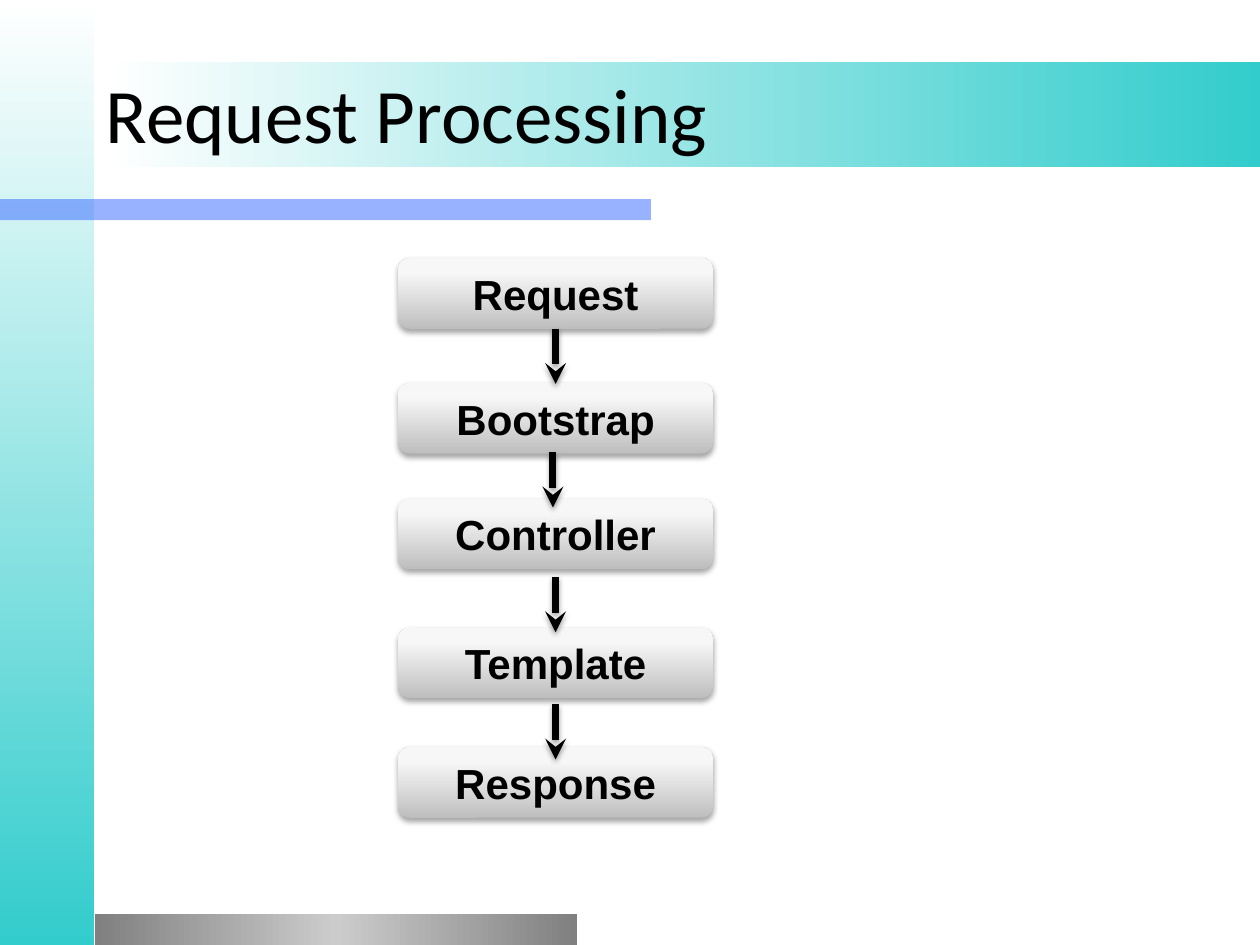
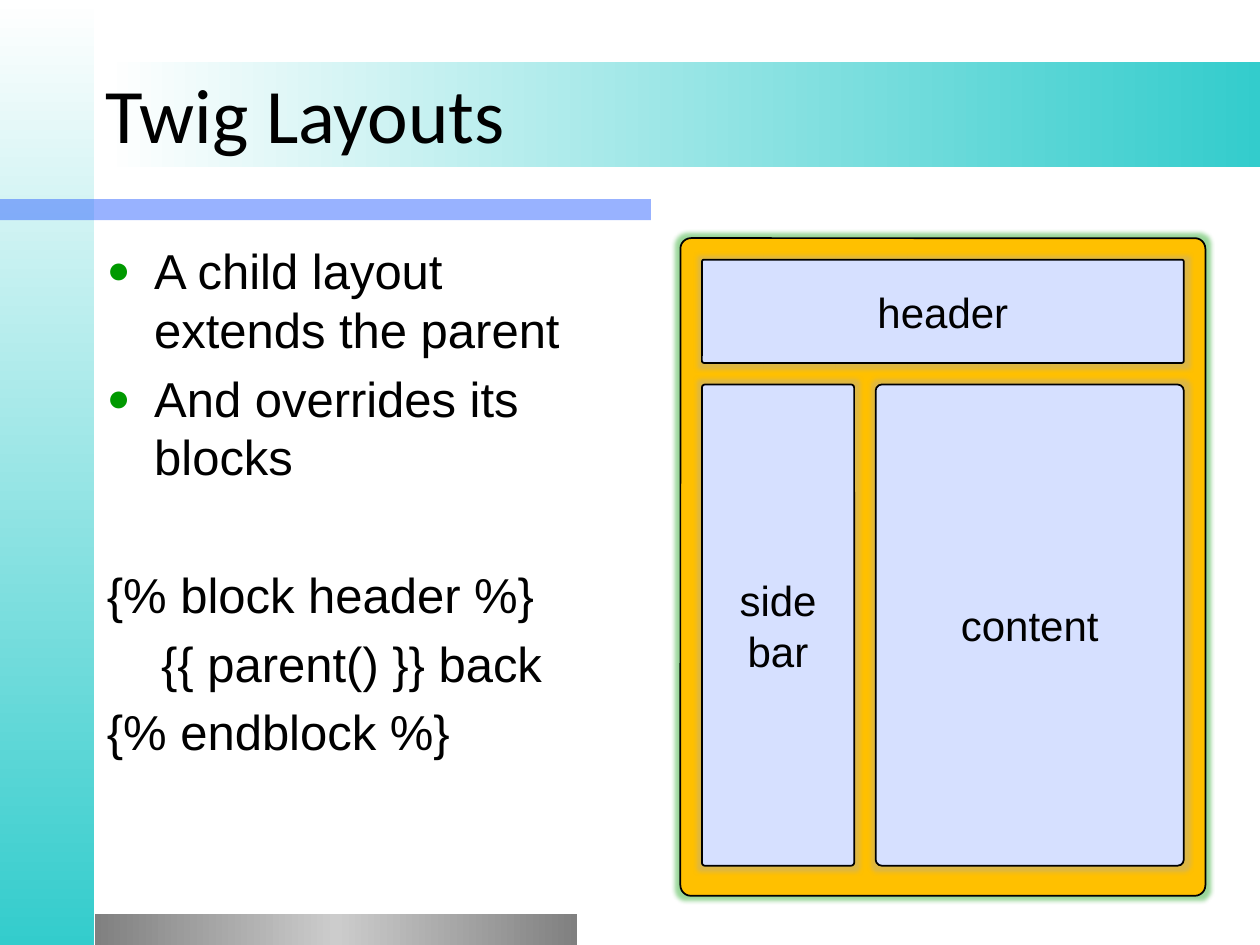
from dataclasses import dataclass
from lxml.etree import SubElement
from pptx import Presentation
from pptx.dml.color import RGBColor
from pptx.enum.shapes import MSO_CONNECTOR, MSO_SHAPE
from pptx.enum.text import MSO_ANCHOR, PP_ALIGN
from pptx.oxml.ns import qn
from pptx.util import Pt


@dataclass(frozen=True)
class Theme:
    ink: str = "000000"
    white: str = "FFFFFF"
    teal: str = "33CCCC"
    blue: str = "3366FF"
    green: str = "009900"
    gold: str = "FFC000"
    pale: str = "D6E0FF"
    grey: str = "808080"
    silver: str = "CCCCCC"
    glow_grey: str = "AAAAAA"
    title_font: str = "Calibri"
    body_font: str = "Arial"
    title_size: int = 44
    body_size: int = 28
    label_size: int = 24


THEME = Theme()
PAGE_WIDTH, PAGE_HEIGHT = 720, 540

# Slide 1 content: steps with their tops, arrows with centre and top
FLOW_TITLE = "Request Processing"
STEPS = [("Request", 147.6), ("Bootstrap", 218.9), ("Controller", 285.1),
         ("Template", 358.6), ("Response", 427)]
ARROWS = [(317.5, 187.9), (316, 258.5), (317.5, 329.8), (317.5, 402.5)]
STEP_LEFT, STEP_WIDTH, STEP_HEIGHT, ARROW_LENGTH = 227.5, 180, 40.3, 31.5
STEP_FADE = [(0, "BEBEBE"), (80, "F7F7F7"), (100, "F8F8F8")]

# Slide 2 content: text, bulleted, left indent, space before
LAYOUT_TITLE = "Twig Layouts"
BODY = [
    ("A child layout extends the parent", True, 27, 5.6),
    ("And overrides its blocks", True, 27, 5.6),
    ("{% block header %}", False, 0, 45),
    ("{{ parent() }} back", False, 31, 5.6),
    ("{% endblock %}", False, 0, 5.6),
]
FRAME = (388.8, 136.1, 300, 375.8)
GAP, HEADER_HEIGHT, SIDEBAR_WIDTH, COLUMN_HEIGHT = 12.3, 59, 87, 275

# Bands on every slide: place, gradient stops, angle
BANDS = [
    ((0, 0, 54, PAGE_HEIGHT), [(0, THEME.white), (100, THEME.teal)], 90),
    ((0, 113.8, 372, 12), None, 0),
    ((54.3, 522, 275.5, 18),
     [(0, THEME.grey), (50, THEME.silver), (100, THEME.grey)], 0),
    ((60.5, 35.3, 659.5, 60), [(0, THEME.white), (100, THEME.teal)], 0),
]


def rgb(value):
    return RGBColor.from_string(value)


def add_color(parent, value, alpha=100):
    color = SubElement(parent, qn("a:srgbClr"), val=value)
    if alpha < 100:
        SubElement(color, qn("a:alpha"), val=str(alpha * 1000))


def add_box(page, kind, place, fill, line=None, alpha=100):
    box = page.shapes.add_shape(kind, *[Pt(length) for length in place])
    box.shadow.inherit = False
    if fill:
        box.fill.solid()
        box.fill.fore_color.rgb = rgb(fill)
        if alpha < 100:
            color = box._element.spPr.find(".//" + qn("a:srgbClr"))
            SubElement(color, qn("a:alpha"), val=str(alpha * 1000))
    if line:
        box.line.color.rgb = rgb(line)
        box.line.width = Pt(1)
    else:
        box.line.fill.background()
    return box


def set_gradient(box, stops, angle):
    """Fill with (percent, colour) stops; the angle runs clockwise."""
    box.fill.gradient()
    box.fill.gradient_angle = (360 - angle) % 360
    stop_list = box._element.spPr.find(".//" + qn("a:gsLst"))
    for stop in list(stop_list):
        stop_list.remove(stop)
    for percent, color in stops:
        add_color(SubElement(stop_list, qn("a:gs"), pos=str(percent * 1000)), color)


def effect_list(item):
    properties = item._element.spPr
    effects = properties.find(qn("a:effectLst"))
    if effects is None:
        effects = SubElement(properties, qn("a:effectLst"))
    return effects


def add_shadow(item, distance, alpha):
    shadow = SubElement(effect_list(item), qn("a:outerShdw"),
                        blurRad=str(Pt(3.1)), dist=str(Pt(distance)),
                        dir="5400000", rotWithShape="0")
    add_color(shadow, THEME.ink, alpha)


def add_glow(item, color):
    glow = SubElement(effect_list(item), qn("a:glow"), rad=str(Pt(5)))
    add_color(glow, color, 40)


def add_span(para, text, size, font=THEME.body_font, bold=False):
    span = para.add_run()
    span.text = text
    span.font.name = font
    span.font.size = Pt(size)
    span.font.bold = bold
    span.font.color.rgb = rgb(THEME.ink)


def add_label(box, lines, bold=False):
    frame = box.text_frame
    frame.word_wrap = True
    frame.vertical_anchor = MSO_ANCHOR.MIDDLE
    for index, line in enumerate(lines):
        para = frame.add_paragraph() if index else frame.paragraphs[0]
        para.alignment = PP_ALIGN.CENTER
        add_span(para, line, THEME.label_size, bold=bold)


def add_text_box(page, place):
    frame = page.shapes.add_textbox(*[Pt(length) for length in place]).text_frame
    frame.word_wrap = True
    return frame


def add_page(deck, title):
    """Blank page with the shared bands and a title."""
    page = deck.slides.add_slide(deck.slide_layouts[6])
    for place, stops, angle in BANDS:
        if stops:
            set_gradient(add_box(page, MSO_SHAPE.RECTANGLE, place, None), stops, angle)
        else:
            add_box(page, MSO_SHAPE.RECTANGLE, place, THEME.blue, alpha=50)
    frame = add_text_box(page, (53.3, 19.4, 612, 90))
    frame.vertical_anchor = MSO_ANCHOR.MIDDLE
    add_span(frame.paragraphs[0], title, THEME.title_size, THEME.title_font)
    return page


def set_bullet(para, indent):
    properties = para._p.get_or_add_pPr()
    properties.set("indent", str(-Pt(indent)))
    add_color(SubElement(properties, qn("a:buClr")), THEME.green)
    SubElement(properties, qn("a:buSzPct"), val="80000")
    SubElement(properties, qn("a:buFont"), typeface=THEME.body_font)
    SubElement(properties, qn("a:buChar"), char="●")


def build_flow(deck):
    page = add_page(deck, FLOW_TITLE)
    # Steps
    for name, top in STEPS:
        box = add_box(page, MSO_SHAPE.ROUNDED_RECTANGLE,
                      (STEP_LEFT, top, STEP_WIDTH, STEP_HEIGHT), None)
        set_gradient(box, STEP_FADE, 270)
        add_shadow(box, 1.8, 35)
        add_label(box, [name], bold=True)
    # Arrows
    for center, top in ARROWS:
        arrow = page.shapes.add_connector(
            MSO_CONNECTOR.STRAIGHT, Pt(center), Pt(top),
            Pt(center), Pt(top + ARROW_LENGTH))
        arrow.line.color.rgb = rgb(THEME.ink)
        arrow.line.width = Pt(4)
        SubElement(arrow._element.spPr.find(qn("a:ln")), qn("a:tailEnd"), type="stealth")
        add_shadow(arrow, 1.6, 38)


def build_layouts(deck):
    page = add_page(deck, LAYOUT_TITLE)
    # Bullets and template code
    frame = add_text_box(page, (54, 133.9, 310.3, 380.9))
    for index, (text, bulleted, indent, space) in enumerate(BODY):
        para = frame.add_paragraph() if index else frame.paragraphs[0]
        para.space_before = Pt(space)
        para._p.get_or_add_pPr().set("marL", str(Pt(indent)))
        if bulleted:
            set_bullet(para, indent)
        add_span(para, text, THEME.body_size)
    # Page layout diagram
    left, top, width = FRAME[0] + GAP, FRAME[1] + GAP, FRAME[2] - 2 * GAP
    row_top = top + HEADER_HEIGHT + GAP
    content_left = left + SIDEBAR_WIDTH + GAP
    content_width = width - SIDEBAR_WIDTH - GAP
    blocks = [
        ([], FRAME, THEME.gold, THEME.green),
        (["header"], (left, top, width, HEADER_HEIGHT), THEME.pale, THEME.glow_grey),
        (["side", "bar"], (left, row_top, SIDEBAR_WIDTH, COLUMN_HEIGHT),
         THEME.pale, THEME.glow_grey),
        (["content"], (content_left, row_top, content_width, COLUMN_HEIGHT),
         THEME.pale, THEME.glow_grey),
    ]
    for lines, place, fill, glow in blocks:
        box = add_box(page, MSO_SHAPE.ROUNDED_RECTANGLE, place, fill, THEME.ink)
        box.adjustments[0] = 0.02
        add_glow(box, glow)
        add_label(box, lines)


def main():
    deck = Presentation()
    deck.slide_width, deck.slide_height = Pt(PAGE_WIDTH), Pt(PAGE_HEIGHT)
    build_flow(deck)
    build_layouts(deck)
    deck.save("out.pptx")


if __name__ == "__main__":
    main()
